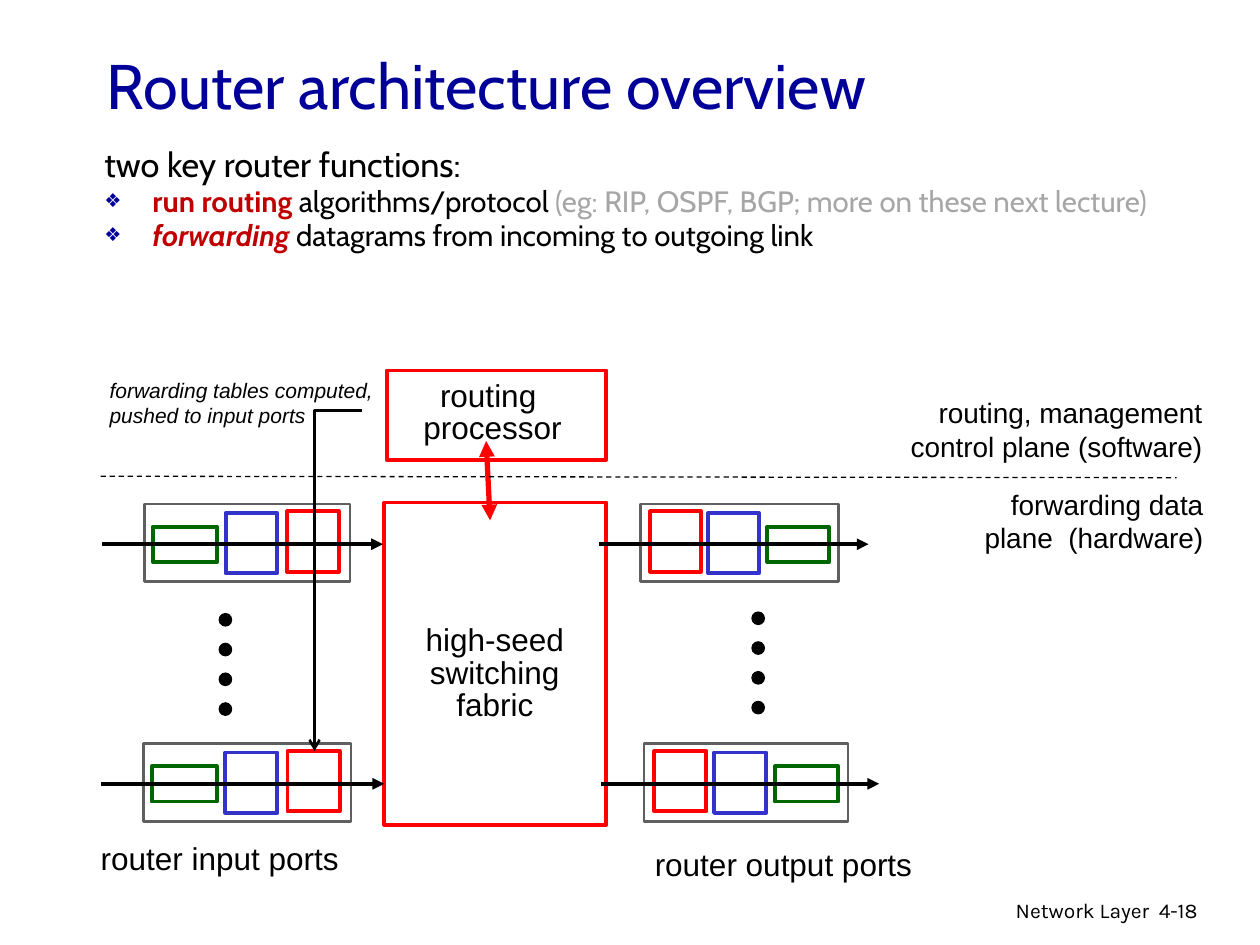
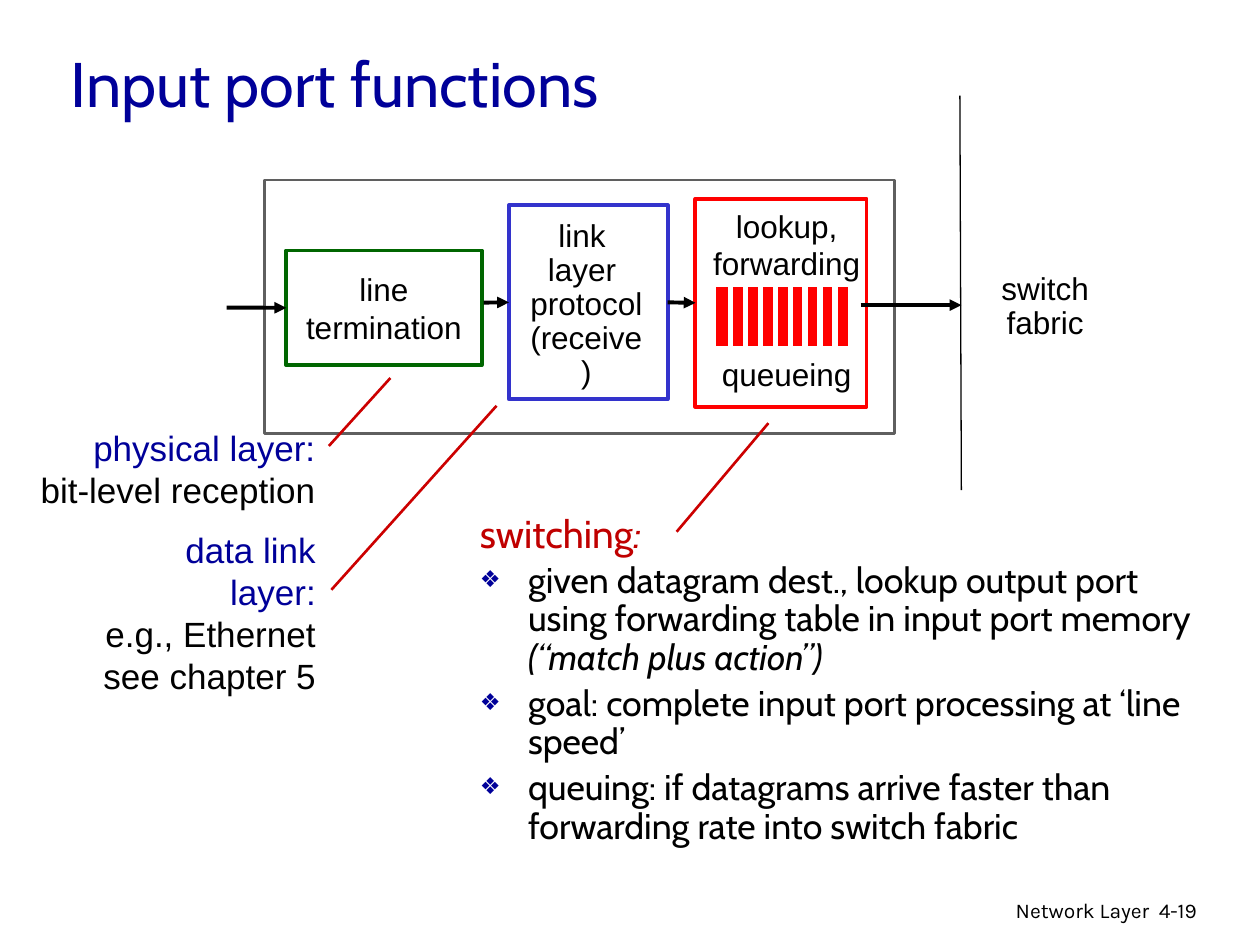
from lxml import etree
from pptx import Presentation
from pptx import util as u
from pptx.dml.color import RGBColor
from pptx.enum import dml, shapes, text
from pptx.oxml import ns

COLORS = {
    "title": "000099", "ink": "000000", "paper": "FFFFFF", "frame": "5F5F5F",
    "green": "006600", "blue": "3333CC", "red": "FF0000", "callout": "CC0000",
    "key": "C00000", "muted": "A6A6A6",
}
RECT, OVAL = shapes.MSO_SHAPE.RECTANGLE, shapes.MSO_SHAPE.OVAL
LEFT, CENTER, RIGHT = text.PP_ALIGN.LEFT, text.PP_ALIGN.CENTER, text.PP_ALIGN.RIGHT


def write(frame, lines, base, **layout):
    """Fill a frame: each line is a string or a list of (words, format) spans."""
    for number, line in enumerate(lines):
        para = frame.paragraphs[0] if number == 0 else frame.add_paragraph()
        for name, value in layout.items():
            setattr(para, name, value)
        for words, changes in [(line, {})] if isinstance(line, str) else line:
            span = para.add_run()
            span.text = words
            for name, value in {"color": "ink", **base, **changes}.items():
                if name == "color":
                    span.font.color.rgb = RGBColor.from_string(COLORS[value])
                else:
                    setattr(span.font, name, value)


def draw_box(page, spot, line, width, fill="paper", kind=RECT):
    box = page.shapes.add_shape(kind, *[u.Cm(value) for value in spot])
    box.shadow.inherit = False
    box.fill.solid()
    box.fill.fore_color.rgb = RGBColor.from_string(COLORS[fill])
    box.line.color.rgb = RGBColor.from_string(COLORS[line])
    box.line.width = u.Pt(width)
    return box


deck = Presentation()
deck.slide_width, deck.slide_height = u.Cm(25.4), u.Cm(19.05)

# Titles, lists and footers
contents = [
    {
        "title": "Router architecture overview", "title_spot": (1.9, 0.84, 21.59, 1.7),
        "body_spot": (1.85, 2.92, 22.58, 2.54), "number": "4-18",
        "sizes": (19.6, 16.8), "spacings": (0.8, 0.8),
        "body": [
            [("two key router functions:", {})],
            [("run routing", {"color": "key", "bold": True}),
             (" algorithms/protocol ", {}),
             ("(eg: RIP, OSPF, BGP; more on these next lecture)", {"color": "muted"})],
            [("forwarding ", {"color": "key", "bold": True, "italic": True}),
             ("datagrams from incoming to outgoing link", {})],
        ],
    },
    {
        "title": "Input port functions", "title_spot": (1.17, 0.81, 21.59, 1.7),
        "body_spot": (9.42, 10.41, 15.16, 7.42), "number": "4-19",
        "sizes": (22.2, 20.4), "spacings": (0.7, 0.9),
        "body": [
            [("switching", {"color": "key"}), (":", {"color": "key", "italic": True})],
            [("given datagram dest., lookup output port using forwarding table "
              "in input port memory ", {}), ("(“match plus action”)", {"italic": True})],
            [("goal: complete input port processing at ‘line speed’", {})],
            [("queuing: if datagrams arrive faster than forwarding rate "
              "into switch fabric", {})],
        ],
    },
]
pages = []
for content in contents:
    page = deck.slides.add_slide(deck.slide_layouts[1])
    pages.append(page)
    title, body = page.shapes.title, page.placeholders[1]
    for holder, spot in ((title, content["title_spot"]), (body, content["body_spot"])):
        holder.left, holder.top, holder.width, holder.height = [u.Cm(v) for v in spot]
        holder.text_frame.auto_size = text.MSO_AUTO_SIZE.NONE
    title.text_frame.vertical_anchor = text.MSO_ANCHOR.MIDDLE
    write(title.text_frame, [content["title"]],
          {"name": "Cabin", "size": u.Pt(36), "color": "title"}, alignment=LEFT)

    write(body.text_frame, content["body"], {"name": "Cabin"}, alignment=LEFT)
    for number, para in enumerate(body.text_frame.paragraphs):
        level = min(number, 1)
        size = content["sizes"][level]
        para.line_spacing = content["spacings"][level]
        para.space_before = u.Pt(round(size * 0.2, 1))
        for span in para.runs:
            span.font.size = u.Pt(size)
        props = para._p.get_or_add_pPr()
        props.set("marL", str(u.Cm(0.97)))
        props.set("indent", str(-u.Cm(0.97)))
        if level == 0:
            etree.SubElement(props, ns.qn("a:buNone"))
            continue
        bullet_color = etree.SubElement(props, ns.qn("a:buClr"))
        etree.SubElement(bullet_color, ns.qn("a:srgbClr"), val=COLORS["title"])
        etree.SubElement(props, ns.qn("a:buSzPct"), val="65000")
        etree.SubElement(props, ns.qn("a:buFont"), typeface="Arial")
        etree.SubElement(props, ns.qn("a:buChar"), char="❖")

    for words, left, width, align in (("Network Layer", 15.37, 8.05, RIGHT),
                                      (content["number"], 23.11, 1.88, LEFT)):
        footer = page.shapes.add_textbox(u.Cm(left), u.Cm(17.96), u.Cm(width), u.Cm(0.78))
        footer.text_frame.word_wrap = True
        write(footer.text_frame, [words], {"name": "Karla", "size": u.Pt(12)},
              alignment=align)
router, port = pages

# Lines: page, start, end, colour, width, ends and joins
ARROW = {"tailEnd": "triangle"}
lines = [
    (router, (9.8, 8.89), (9.88, 10.49), "red", 3,
     {"headEnd": "triangle", "tailEnd": "triangle"}),
    (router, (2.03, 9.6), (23.72, 9.63), "ink", 0.75, {"dash": True}),
]

# Router: switching fabric and processor
draw_box(router, (7.75, 10.13, 4.47, 6.5), "red", 2.25)
draw_box(router, (7.8, 7.47, 4.42, 1.8), "red", 2.25)

# Router: ports, each measured from the start of its arrow
part_heights = {"frame": (0, 1.57), "green": (0.46, 0.71),
                "blue": (0.18, 1.22), "red": (0.15, 1.22)}
input_parts = {"frame": (0.86, 4.14), "green": (1.02, 1.3),
               "blue": (2.49, 1.04), "red": (3.73, 1.04)}
output_parts = {"frame": (0.84, 3.99), "red": (1.04, 1.02),
                "blue": (2.21, 1.02), "green": (3.4, 1.24)}
for parts, length, start, top, scale in (
        (input_parts, 5.66, 2.06, 10.16, 1), (input_parts, 5.66, 2.03, 14.99, 1.01),
        (output_parts, 5.44, 12.07, 10.16, 1), (output_parts, 5.44, 12.12, 14.99, 1.03)):
    for color, (offset, width) in parts.items():
        drop, height = part_heights[color]
        draw_box(router, (start + offset * scale, top + drop, width * scale, height),
                 color, 1.5 if color == "frame" else 2.25)
    lines.append((router, (start, top + 0.81), (start + length * scale, top + 0.81),
                  "ink", 2.25, ARROW))

# Router: dots between the ports
for left, top in ((4.42, 12.37), (15.16, 12.34)):
    for step in range(4):
        draw_box(router, (left, top + 0.6 * step, 0.25, 0.25), "ink", 0.75, "ink", OVAL)

# Input port: frame, three stages and the queue
draw_box(port, (5.33, 3.63, 12.7, 5.11), "frame", 1.5)
termination = draw_box(port, (5.77, 5.05, 3.94, 2.31), "green", 2.25)
protocol = draw_box(port, (10.26, 4.14, 3.2, 3.91), "blue", 2.25)
lookup = draw_box(port, (14.02, 4.01, 3.45, 4.19), "red", 2.25)
draw_box(port, (14.38, 5.74, 2.77, 1.3), "paper", 3, "red")
lines += [(port, (14.73 + 0.3 * slit, 5.75), (14.73 + 0.3 * slit, 7), "paper", 3, {})
          for slit in range(8)]
lines += [
    (port, (4.57, 6.2), (5.77, 6.2), "ink", 2.25, {**ARROW, "end": (termination, 1)}),
    (port, (9.75, 6.1), (10.26, 6.1), "ink", 2.25, {**ARROW, "end": (protocol, 1)}),
    (port, (13.46, 6.1), (14.02, 6.1), "ink", 2.25,
     {**ARROW, "begin": (protocol, 3), "end": (lookup, 1)}),
    (port, (17.35, 6.15), (19.38, 6.15), "ink", 2.25, ARROW),
    (port, (19.35, 1.93), (19.38, 9.88), "ink", 0.75, {}),
    (port, (6.63, 8.99), (7.87, 7.62), "callout", 1.5, {}),
    (port, (6.68, 11.89), (10.01, 8.18), "callout", 1.5, {}),
    (port, (13.64, 10.72), (15.49, 8.53), "callout", 1.5, {}),
]

# The table push is an elbow turned a quarter, so it runs left and then down
lines.append((router, (3.39, 11.23), (10.25, 12.19), "ink", 1.5,
              {"tailEnd": "arrow", "elbow": True}))

for page, start, end, color, width, style in lines:
    kind = shapes.MSO_CONNECTOR.ELBOW if "elbow" in style else shapes.MSO_CONNECTOR.STRAIGHT
    line = page.shapes.add_connector(kind, *[u.Cm(value) for value in start + end])
    line.line.color.rgb = RGBColor.from_string(COLORS[color])
    line.line.width = u.Pt(width)
    if "dash" in style:
        line.line.dash_style = dml.MSO_LINE.DASH
    if "begin" in style:
        line.begin_connect(*style["begin"])
    if "end" in style:
        line.end_connect(*style["end"])
    props = line._element.spPr
    for tip in ("headEnd", "tailEnd"):
        if tip in style:
            etree.SubElement(props.find(ns.qn("a:ln")), ns.qn("a:" + tip), type=style[tip])
    etree.SubElement(props, ns.qn("a:effectLst"))
    if "elbow" in style:
        props.find(ns.qn("a:xfrm")).set("rot", "5400000")
        bend = props.find(ns.qn("a:prstGeom")).find(ns.qn("a:avLst"))
        etree.SubElement(bend, ns.qn("a:gd"), name="adj1", fmla="val 0")

# Labels: page, spot, alignment, size, lines, options
labels = [
    (router, (8.26, 12.5, 3.43, 2.24), CENTER, 18,
     ["high-seed ", "switching", "fabric"], {"spacing": 0.85}),
    (router, (8.28, 7.57, 3.3, 1.55), CENTER, 18,
     ["routing ", "processor"], {"spacing": 0.85}),
    (router, (1.78, 16.79, 5.31, 1.02), LEFT, 18, ["router input ports"], {}),
    (router, (12.95, 16.92, 5.69, 1.02), LEFT, 18, ["router output ports"], {}),
    (router, (19.13, 9.7, 5.38, 1.63), RIGHT, 16,
     ["forwarding data plane  (hardware)"], {"wrap": True}),
    (router, (17.68, 7.85, 6.81, 1.63), RIGHT, 16,
     ["routing, management", "control plane (software)"], {"wrap": True}),
    (router, (1.96, 7.49, 5.99, 1.27), LEFT, 12,
     ["forwarding tables computed,", "pushed to input ports"], {"italic": True}),
    (port, termination, CENTER, 18, ["line", "termination"], {"middle": True}),
    (port, (10.36, 5, 2.92, 2.31), CENTER, 18,
     ["link ", "layer ", "protocol", "(receive)"], {"spacing": 0.9, "middle": True}),
    (port, (14.12, 4.04, 3.48, 4.06), CENTER, 18,
     ["lookup,", "forwarding", "queueing"], {"last_gap": 41.4}),
    (port, (19.61, 5.05, 2.92, 2.31), CENTER, 18,
     ["switch", "fabric"], {"spacing": 0.9, "middle": True}),
    (port, (0.56, 8.48, 6.05, 1.96), RIGHT, 20,
     [[("physical layer:", {"color": "title"})], "bit-level reception"], {}),
    (port, (1.57, 10.52, 5.05, 2.79), RIGHT, 20,
     [[("data link layer:", {"color": "title"})], "e.g., Ethernet", "see chapter 5"], {}),
]
for page, spot, align, size, words, options in labels:
    if isinstance(spot, tuple):
        frame = page.shapes.add_textbox(*[u.Cm(value) for value in spot]).text_frame
    else:
        frame = spot.text_frame
    frame.word_wrap = options.get("wrap", False)
    middle = options.get("middle", False)
    frame.vertical_anchor = text.MSO_ANCHOR.MIDDLE if middle else text.MSO_ANCHOR.TOP
    write(frame, words,
          {"name": "Arial", "size": u.Pt(size), "italic": options.get("italic", False)},
          alignment=align, line_spacing=options.get("spacing", 1.0))
    if "last_gap" in options:
        frame.paragraphs[-1].space_before = u.Pt(options["last_gap"])

deck.save("out.pptx")
